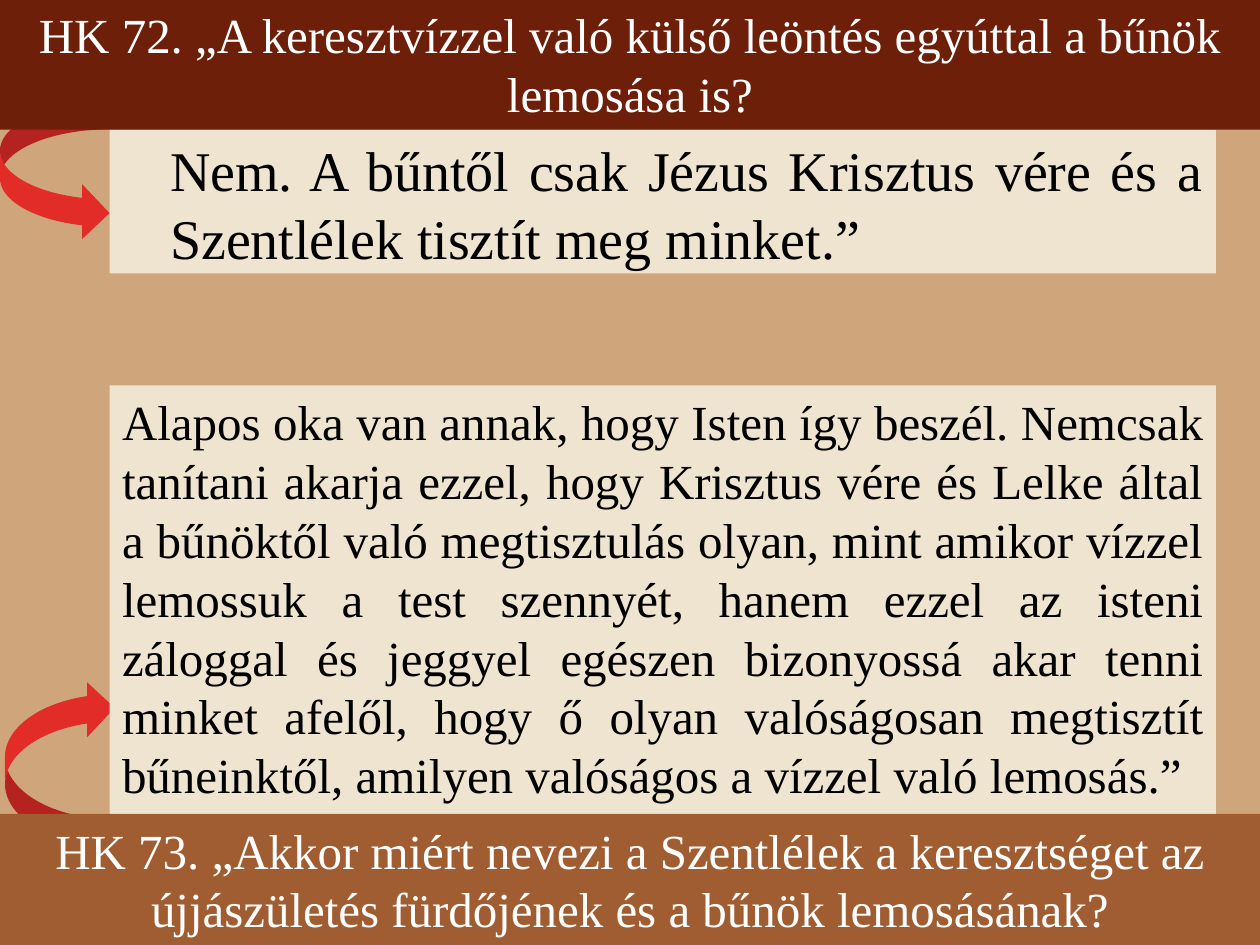
from dataclasses import dataclass

from pptx import Presentation
from pptx.dml.color import RGBColor
from pptx.enum.shapes import MSO_SHAPE
from pptx.enum.text import MSO_ANCHOR, PP_ALIGN
from pptx.util import Inches, Pt

RECT = MSO_SHAPE.RECTANGLE
CURVE = MSO_SHAPE.CURVED_RIGHT_ARROW
TOP = MSO_ANCHOR.TOP
CENTER, JUSTIFY = PP_ALIGN.CENTER, PP_ALIGN.JUSTIFY

FONT = "Times New Roman"
SAND, CREAM, RED = "CFA57B", "EFE4D0", "E22C28"
DARK, BROWN = "6D1F09", "A05D32"
BLACK, WHITE = "000000", "FFFFFF"


@dataclass
class Box:
    left: float
    top: float
    width: float
    height: float
    fill: str


@dataclass
class Panel:
    box: Box
    text: str
    color: str
    align: PP_ALIGN
    size: int = 28
    inset: float = 0.1


def paint(fill, color: str) -> None:
    fill.solid()
    fill.fore_color.rgb = RGBColor.from_string(color)


def draw_box(slide, kind, box: Box):
    shape = slide.shapes.add_shape(
        kind, Inches(box.left), Inches(box.top),
        Inches(box.width), Inches(box.height))
    shape.shadow.inherit = False
    paint(shape.fill, box.fill)
    shape.line.fill.background()
    return shape


def write(shape, text: str, *, size: int, color: str, align, inset: float) -> None:
    frame = shape.text_frame
    frame.word_wrap = True
    frame.vertical_anchor = TOP
    frame.margin_left = Inches(inset)
    para = frame.paragraphs[0]
    para.alignment = align
    run = para.add_run()
    run.text = text
    run.font.name = FONT
    run.font.size = Pt(size)
    paint(run.font.fill, color)


def draw_panel(slide, panel: Panel) -> None:
    shape = draw_box(slide, RECT, panel.box)
    write(shape, panel.text, size=panel.size, color=panel.color,
          align=panel.align, inset=panel.inset)


def draw_arrow(slide, box: Box, flip: bool = False) -> None:
    shape = draw_box(slide, CURVE, box)
    if flip:
        shape._element.spPr.xfrm.set("flipV", "1")


# Questions in the bands, answers in the cream panels
ASK_72 = Panel(
    Box(0, -0.01, 10, 1.04, DARK),
    "HK 72. „A keresztvízzel való külső leöntés egyúttal a bűnök "
    "lemosása is?", WHITE, CENTER)
REPLY_72 = Panel(
    Box(0.87, 1.03, 8.78, 1.14, CREAM),
    "Nem. A bűntől csak Jézus Krisztus vére és a Szentlélek tisztít "
    "meg minket.”", BLACK, JUSTIFY, size=32, inset=0.48)
REPLY_73 = Panel(
    Box(0.87, 3.06, 8.78, 3.4, CREAM),
    "Alapos oka van annak, hogy Isten így beszél. Nemcsak tanítani akarja "
    "ezzel, hogy Krisztus vére és Lelke által a bűnöktől való megtisztulás "
    "olyan, mint amikor vízzel lemossuk a test szennyét, hanem ezzel az "
    "isteni záloggal és jeggyel egészen bizonyossá akar tenni minket "
    "afelől, hogy ő olyan valóságosan megtisztít bűneinktől, amilyen "
    "valóságos a vízzel való lemosás.”", BLACK, JUSTIFY)
ASK_73 = Panel(
    Box(0, 6.46, 10, 1.04, BROWN),
    "HK 73. „Akkor miért nevezi a Szentlélek a keresztséget az "
    "újjászületés fürdőjének és a bűnök lemosásának?", WHITE, CENTER)


def main() -> None:
    deck = Presentation()
    deck.slide_width, deck.slide_height = Inches(10), Inches(7.5)
    slide = deck.slides.add_slide(deck.slide_layouts[6])
    paint(slide.background.fill, SAND)

    # Lower arrow goes behind its answer and question
    draw_arrow(slide, Box(0.04, 5.4, 0.87, 1.32, RED), flip=True)
    for panel in (REPLY_72, REPLY_73, ASK_73):
        draw_panel(slide, panel)

    # Upper arrow goes behind the top band
    draw_arrow(slide, Box(0, 0.81, 0.87, 1.1, RED))
    draw_panel(slide, ASK_72)

    deck.save("out.pptx")


if __name__ == "__main__":
    main()
